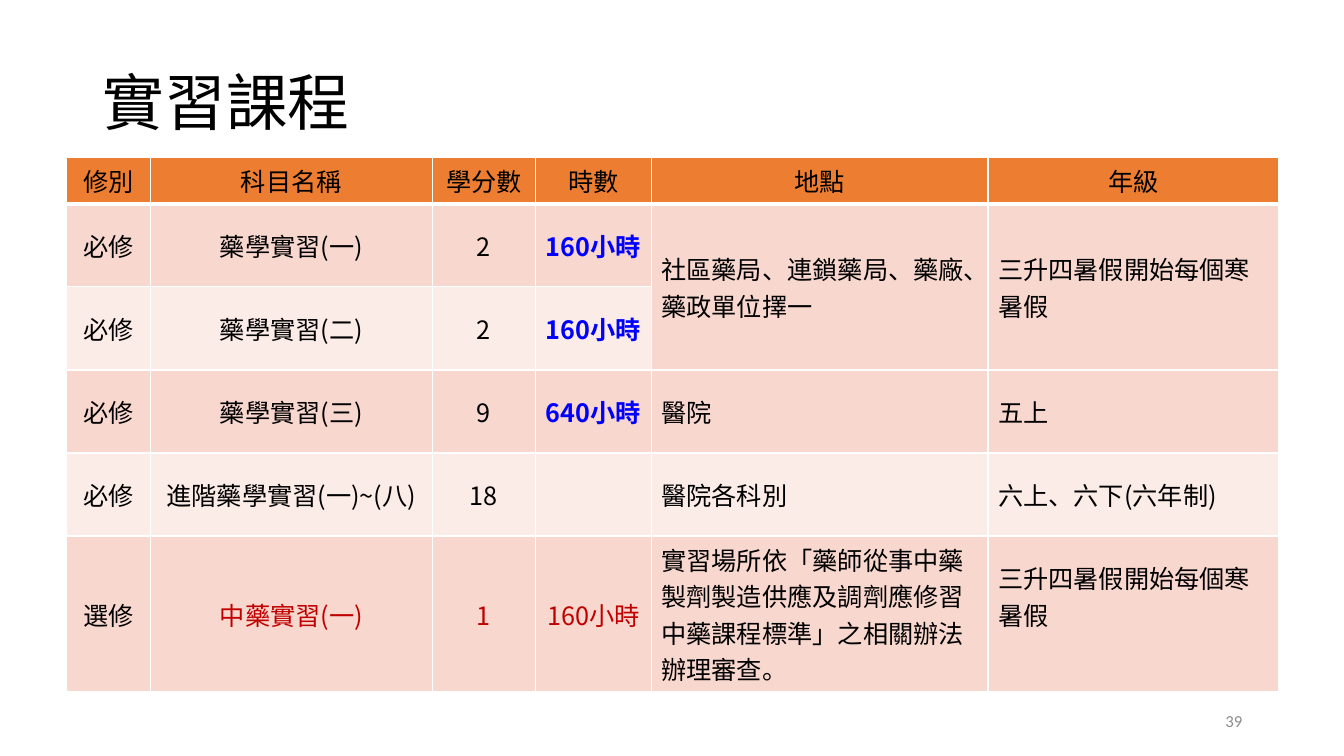
from dataclasses import dataclass

from lxml import etree
from pptx import Presentation
from pptx.dml.color import RGBColor
from pptx.enum import text
from pptx.oxml import ns
from pptx.util import Inches, Pt

COLORS = {
    "ink": "000000", "hours": "0000FF", "elective": "C00000", "page": "8C8C8C",
    "header": "ED7D31", "odd": "F8D7CE", "even": "FCECE8", "rule": "FFFFFF",
}
CJK = "Noto Sans CJK SC"
LEFT, CENTER, RIGHT = text.PP_ALIGN.LEFT, text.PP_ALIGN.CENTER, text.PP_ALIGN.RIGHT
MIDDLE, TOP = text.MSO_ANCHOR.MIDDLE, text.MSO_ANCHOR.TOP


@dataclass
class Style:
    color: str = "ink"
    size: float = 18
    bold: bool = False
    align: text.PP_ALIGN = CENTER
    font: str = CJK


@dataclass
class Course:
    kind: str
    name: str
    credits: str
    hours: str
    place: str
    grade: str
    color: str = "ink"
    hours_color: str = "hours"

    def cells(self) -> list[tuple[str, Style]]:
        hours = Style(self.hours_color, bold=self.hours_color == "hours")
        return [
            (self.kind, Style()),
            (self.name, Style(self.color)),
            (self.credits, Style(self.color)),
            (self.hours, hours),
            (self.place, Style(align=LEFT)),
            (self.grade, Style(align=LEFT)),
        ]


HEADINGS = ["修別", "科目名稱", "學分數", "時數", "地點", "年級"]
COLUMN_WIDTHS = [0.83, 2.8, 1.02, 1.15, 3.34, 2.88]
ROW_HEIGHTS = [0.4, 0.66, 0.66, 0.66, 0.66, 1.34]
VACATIONS = "三升四暑假開始每個寒暑假"
COURSES = [
    Course("必修", "藥學實習(一)", "2", "160小時",
           "社區藥局、連鎖藥局、藥廠、藥政單位擇一", VACATIONS),
    Course("必修", "藥學實習(二)", "2", "160小時", "", ""),
    Course("必修", "藥學實習(三)", "9", "640小時", "醫院", "五上"),
    Course("必修", "進階藥學實習(一)~(八)", "18", "", "醫院各科別", "六上、六下(六年制)"),
    Course("選修", "中藥實習(一)", "1", "160小時",
           "實習場所依「藥師從事中藥製劑製造供應及調劑應修習中藥課程標準」之相關辦法辦理審查。",
           VACATIONS, "elective", "elective"),
]


def rgb(name: str) -> RGBColor:
    return RGBColor.from_string(COLORS[name])


def write(frame, words: str, style: Style) -> None:
    """Put one formatted run into a text frame."""
    paragraph = frame.paragraphs[0]
    paragraph.alignment = style.align
    if not words:
        paragraph.font.size = Pt(style.size)
        return
    run = paragraph.add_run()
    run.text = words
    formats = {"name": style.font, "size": Pt(style.size), "bold": style.bold}
    for attribute, value in formats.items():
        setattr(run.font, attribute, value)
    run.font.color.rgb = rgb(style.color)
    etree.SubElement(run.font._element, ns.qn("a:ea"), typeface=style.font)


def rule_cell(cell, bottom: float) -> None:
    """Draw the four borders, which come before the fill in the cell properties."""
    properties = cell._tc.get_or_add_tcPr()
    widths = {"lnL": 1, "lnR": 1, "lnT": 1, "lnB": bottom}
    for position, (side, width) in enumerate(widths.items()):
        line = etree.Element(ns.qn(f"a:{side}"), w=str(Pt(width)))
        fill = etree.SubElement(line, ns.qn("a:solidFill"))
        etree.SubElement(fill, ns.qn("a:srgbClr"), val=COLORS["rule"])
        properties.insert(position, line)


def add_title(slide) -> None:
    title = slide.shapes.title
    bounds = {"left": 0.92, "top": 0.32, "width": 11.5, "height": 1.45}
    for attribute, value in bounds.items():
        setattr(title, attribute, Inches(value))
    frame = title.text_frame
    frame.auto_size = text.MSO_AUTO_SIZE.NONE
    frame.vertical_anchor = MIDDLE
    frame.paragraphs[0].line_spacing = 0.9
    write(frame, "實習課程", Style(size=44, align=LEFT))


def add_course_table(slide) -> None:
    rows = [[(heading, Style()) for heading in HEADINGS]]
    rows += [course.cells() for course in COURSES]
    courses = slide.shapes.add_table(
        len(rows), len(HEADINGS), Inches(0.66), Inches(1.56),
        Inches(sum(COLUMN_WIDTHS)), Inches(sum(ROW_HEIGHTS))).table
    courses.first_row = courses.horz_banding = False
    for column, width in zip(courses.columns, COLUMN_WIDTHS):
        column.width = Inches(width)
    for number, (row, height) in enumerate(zip(rows, ROW_HEIGHTS)):
        courses.rows[number].height = Inches(height)
        band = "header" if number == 0 else ("even", "odd")[number % 2]
        for index, (words, style) in enumerate(row):
            cell = courses.cell(number, index)
            cell.fill.solid()
            cell.fill.fore_color.rgb = rgb(band)
            cell.vertical_anchor = MIDDLE if number else TOP
            write(cell.text_frame, words, style)
            rule_cell(cell, bottom=1 if number else 3)
    # The first two courses share place and grade
    for index in (4, 5):
        courses.cell(1, index).merge(courses.cell(2, index))
    # The last grade sits one half line above the middle
    courses.cell(5, 5).margin_bottom = Inches(0.41)


def add_page_number(slide) -> None:
    page = slide.shapes.add_textbox(Inches(9.42), Inches(6.95), Inches(3), Inches(0.4))
    page.text_frame.word_wrap = True
    page.text_frame.vertical_anchor = MIDDLE
    write(page.text_frame, "39", Style("page", 12, align=RIGHT, font="Calibri"))


def main() -> None:
    deck = Presentation()
    deck.slide_width, deck.slide_height = Inches(13.33), Inches(7.5)
    slide = deck.slides.add_slide(deck.slide_layouts.get_by_name("Title Only"))
    add_title(slide)
    add_course_table(slide)
    add_page_number(slide)
    deck.save("out.pptx")


if __name__ == "__main__":
    main()
